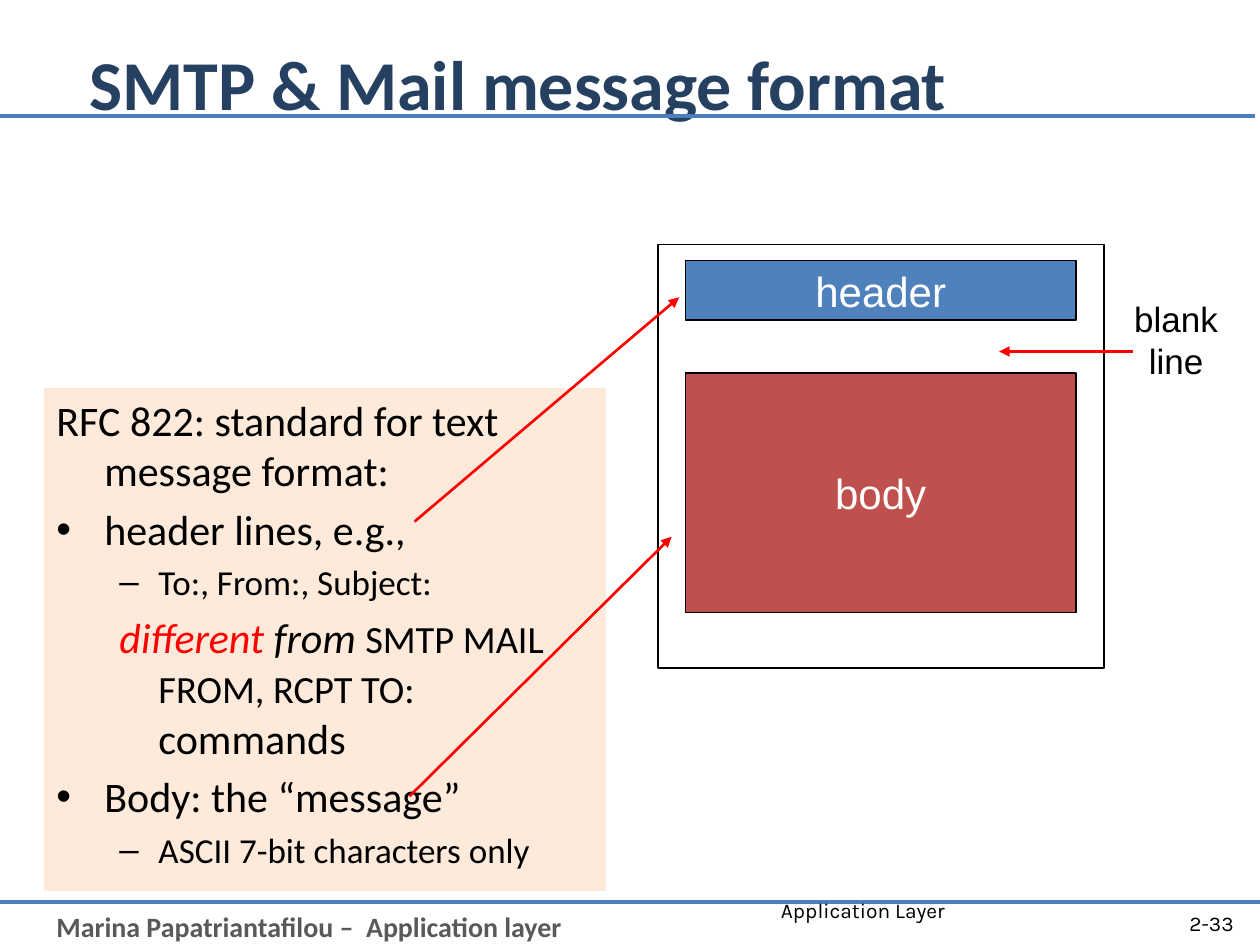
"""Build the slide on the SMTP mail message format."""
from lxml import etree
from pptx import Presentation
from pptx import util as u
from pptx.dml.color import RGBColor
from pptx.enum import shapes, text
from pptx.oxml import ns

COLORS = {
    "rule": "4B7EBC", "footer": "595959", "title": "254061", "panel": "FDEADA",
    "header": "4F81BD", "body": "C0504D", "red": "FF0000", "black": "000000",
    "white": "FFFFFF",
}
ALIGN = text.PP_ALIGN
ANCHOR = text.MSO_ANCHOR


def color(name):
    """Return the named palette colour."""
    return RGBColor.from_string(COLORS[name])


def inches(*values):
    """Convert numbers to lengths."""
    return [u.Inches(value) for value in values]


def add_run(paragraph, words, font="Calibri", size=24, fill="black", bold=False, italic=False):
    """Append formatted text to a paragraph."""
    run = paragraph.add_run()
    run.text = words
    run.font.name = font
    run.font.size = u.Pt(size)
    run.font.bold = bold
    run.font.italic = italic
    run.font.color.rgb = color(fill)


def write(shape, lines, align=ALIGN.LEFT, anchor=ANCHOR.TOP, wrap=True, **style):
    """Fill a shape with lines that share one format."""
    frame = shape.text_frame
    frame.word_wrap = wrap
    frame.vertical_anchor = anchor
    for index, line in enumerate(lines):
        paragraph = frame.paragraphs[0] if index == 0 else frame.add_paragraph()
        paragraph.alignment = align
        add_run(paragraph, line, **style)


def add_label(slide, box, lines, **style):
    """Add a text box with formatted lines."""
    write(slide.shapes.add_textbox(*inches(*box)), lines, **style)


def add_rectangle(slide, box, fill=None, line=None, width=0.75):
    """Add a flat rectangle with optional fill and outline."""
    shape = slide.shapes.add_shape(shapes.MSO_SHAPE.RECTANGLE, *inches(*box))
    shape.shadow.inherit = False
    if fill:
        shape.fill.solid()
        shape.fill.fore_color.rgb = color(fill)
    else:
        shape.fill.background()
    if line:
        shape.line.color.rgb = color(line)
        shape.line.width = u.Pt(width)
    else:
        shape.line.fill.background()
    return shape


def add_line(slide, start, end, stroke, width, arrow=False):
    """Add a straight line, with an arrowhead at its end on request."""
    line = slide.shapes.add_connector(shapes.MSO_CONNECTOR.STRAIGHT, *inches(*start, *end))
    line.line.color.rgb = color(stroke)
    line.line.width = u.Pt(width)
    if arrow:
        etree.SubElement(line.line._get_or_add_ln(), ns.qn("a:tailEnd"), type="triangle")
    etree.SubElement(line._element.spPr, ns.qn("a:effectLst"))


def set_list_format(paragraph, level, bullet):
    """Set the hanging indent, spacing and bullet of a list paragraph."""
    margin, indent = ((0.38, -0.38), (0.81, -0.31))[level]
    paragraph.level = level
    paragraph.alignment = ALIGN.LEFT
    properties = paragraph._p.get_or_add_pPr()
    properties.set("marL", str(u.Inches(margin)))
    properties.set("indent", str(u.Inches(indent)))
    spacing = etree.SubElement(properties, ns.qn("a:spcBef"))
    etree.SubElement(spacing, ns.qn("a:spcPct"), val="20000")
    if bullet:
        etree.SubElement(properties, ns.qn("a:buFont"), typeface="Arial")
        etree.SubElement(properties, ns.qn("a:buChar"), char=bullet)
    else:
        etree.SubElement(properties, ns.qn("a:buNone"))


def build_title(slide, box):
    """Place the title and the rule that runs under it."""
    left, top, width, height = box
    add_line(slide, (-0.04, top + 0.89), (9.96, top + 0.89), "rule", 2.25)
    title = slide.shapes.title
    title.left, title.top, title.width, title.height = inches(left, top, width, height)
    write(title, ["SMTP & Mail message format"], anchor=ANCHOR.MIDDLE,
          size=40, fill="title", bold=True)


def build_footer(slide, box):
    """Place the footer rule, author, section and slide number."""
    left, top, width, height = box
    add_line(slide, (left, top), (left + width, top), "rule", 2.25)
    add_label(slide, (left + 0.35, top + 0.01, 5.5, height),
              ["Marina Papatriantafilou –  Application layer"],
              size=16, fill="footer", bold=True)
    add_label(slide, (left + 6.1, top - 0.09, 2.9, 0.31), ["Application Layer"],
              font="Karla", size=12)
    add_label(slide, (left + 9.09, top - 0.03, 0.8, 0.4), ["2-33"], font="Karla", size=12,
              align=ALIGN.RIGHT, anchor=ANCHOR.MIDDLE)


def build_notes_panel(slide, box):
    """Place the tinted panel with the message format list."""
    items = [
        (0, None, [("RFC 822: standard for text message format:", {})]),
        (0, "•", [("header lines, e.g.,", {})]),
        (1, "–", [("To:, From:, Subject:", {"size": 20})]),
        (1, None, [("different ", {"fill": "red", "italic": True}),
                   ("from ", {"italic": True}),
                   ("SMTP MAIL FROM, RCPT TO:", {"size": 22}),
                   (" commands", {})]),
        (0, "•", [("Body: the “message”", {})]),
        (1, "–", [("ASCII 7-bit characters only", {"size": 20})]),
    ]
    frame = add_rectangle(slide, box, fill="panel").text_frame
    frame.word_wrap = True
    frame.vertical_anchor = ANCHOR.TOP
    for index, (level, bullet, runs) in enumerate(items):
        paragraph = frame.paragraphs[0] if index == 0 else frame.add_paragraph()
        set_list_format(paragraph, level, bullet)
        for words, style in runs:
            add_run(paragraph, words, **style)


def build_message(slide, box):
    """Place the message frame with its header, body and blank line label."""
    left, top, width, height = box
    for name, offset, part_height in (("header", 0.13, 0.47), ("body", 1.02, 1.9)):
        part = add_rectangle(slide, (left + 0.22, top + offset, 3.1, part_height), name, "black")
        write(part, [name], align=ALIGN.CENTER, anchor=ANCHOR.MIDDLE, wrap=False,
              font="Arial", fill="white")
    add_rectangle(slide, box, line="black", width=1)
    add_label(slide, (left + width + 0.14, top + 0.37, 0.87, 0.77), ["blank", "line"],
              align=ALIGN.CENTER, wrap=False, font="Arial", size=20)


def build_arrows(slide):
    """Point from the explanations to the parts of the message."""
    for start, end in (((3.25, 6.32), (5.33, 4.26)),
                       ((8.99, 2.79), (7.93, 2.79)),
                       ((3.29, 4.14), (5.39, 2.36))):
        add_line(slide, start, end, "red", 1.5, arrow=True)


def main():
    """Build and save the presentation."""
    presentation = Presentation()
    presentation.slide_width, presentation.slide_height = inches(10, 7.5)
    slide = presentation.slides.add_slide(presentation.slide_layouts[5])
    build_footer(slide, (0, 7.16, 10, 0.34))
    build_title(slide, (0.61, 0.03, 8.5, 1.25))
    build_notes_panel(slide, (0.35, 3.08, 4.46, 3.99))
    build_message(slide, (5.22, 1.94, 3.54, 3.36))
    build_arrows(slide)
    presentation.save("out.pptx")


if __name__ == "__main__":
    main()
